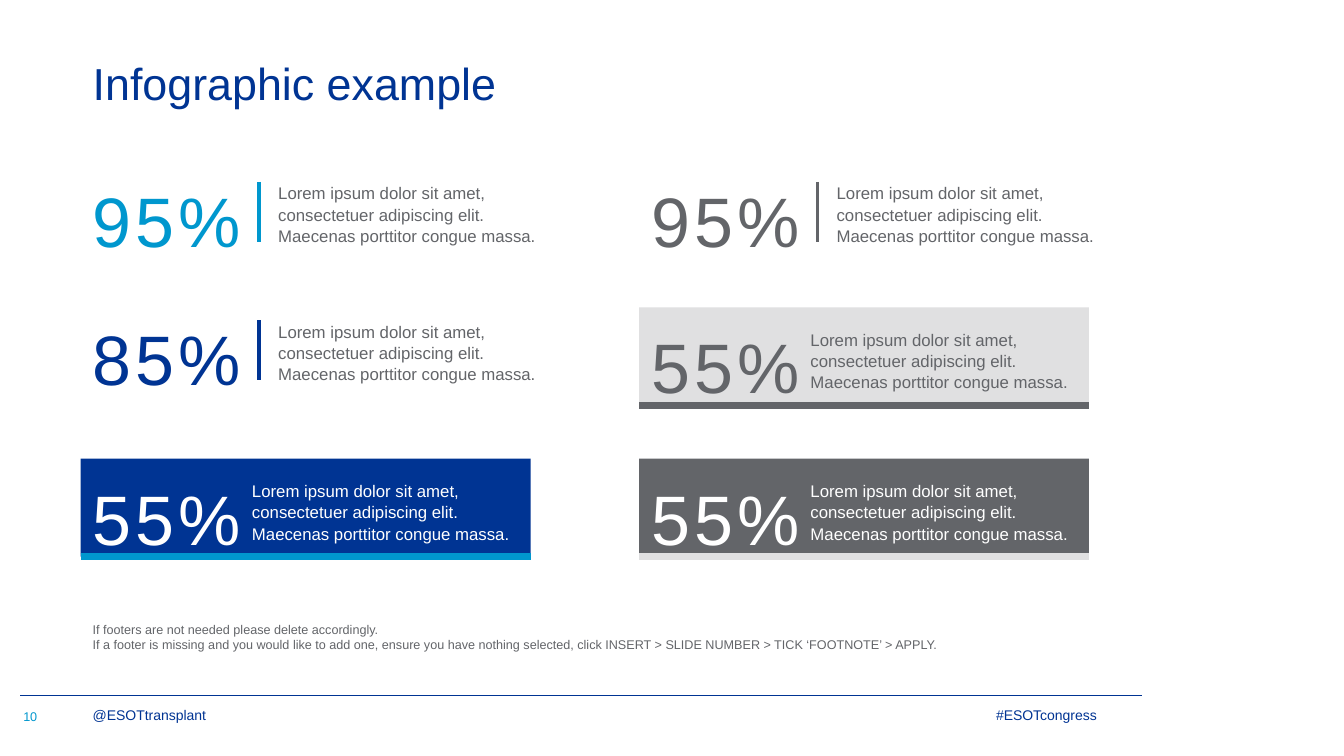
from dataclasses import dataclass

from lxml import etree
from pptx import Presentation
from pptx.dml.color import RGBColor
from pptx.enum.shapes import MSO_CONNECTOR, MSO_SHAPE
from pptx.enum.text import MSO_ANCHOR, PP_ALIGN
from pptx.oxml.ns import qn
from pptx.util import Pt

STRAIGHT, RECTANGLE = MSO_CONNECTOR.STRAIGHT, MSO_SHAPE.RECTANGLE
TOP, MIDDLE, BOTTOM = MSO_ANCHOR.TOP, MSO_ANCHOR.MIDDLE, MSO_ANCHOR.BOTTOM
LEFT, RIGHT = PP_ALIGN.LEFT, PP_ALIGN.RIGHT


@dataclass(frozen=True)
class Theme:
    font: str = "Arial"
    navy: str = "003493"
    cyan: str = "0097CE"
    grey: str = "636569"
    pale: str = "E0E0E1"
    white: str = "FFFFFF"
    title_size: int = 32
    figure_size: int = 50
    caption_size: int = 12
    footer_size: int = 10
    note_size: int = 9


THEME = Theme()

TITLE = "Infographic example"
CAPTION = ("Lorem ipsum dolor sit amet, consectetuer adipiscing elit. "
           "Maecenas porttitor congue massa.")
FOOTNOTE = [
    "If footers are not needed please delete accordingly.",
    "If a footer is missing and you would like to add one, ensure you have nothing "
    "selected, click INSERT > SLIDE NUMBER > TICK ‘FOOTNOTE’ > APPLY.",
]
SLIDE_NUMBER = "10"
HANDLE, HASHTAG = "@ESOTtransplant", "#ESOTcongress"

# column, row, figure, figure colour
PLAIN_STATS = [
    (0, 0, "95%", THEME.cyan),
    (0, 1, "85%", THEME.navy),
    (1, 0, "95%", THEME.grey),
]
# column, row, figure, text colour, card fill, base line colour
CARD_STATS = [
    (0, 2, "55%", THEME.white, THEME.navy, THEME.cyan),
    (1, 1, "55%", THEME.grey, THEME.pale, THEME.grey),
    (1, 2, "55%", THEME.white, THEME.grey, THEME.pale),
]

MARGIN = 66.24
COLUMNS = [MARGIN, MARGIN + 398.9]
ROWS = [121, 219.6, 327.6]
CONTENT_WIDTH = 828
FIGURE_WIDTH, CAPTION_WIDTH, STAT_HEIGHT = 113.8, 199.4, 43
CAPTION_DROP = 9
DIVIDER_GAP, PLAIN_CAPTION_GAP = 118.8, 132.5
CARD_WIDTH, CARD_HEIGHT = 321.4, 70
CARD_PAD_X, CARD_PAD_Y = 8.64, 5.8
FIGURE_SPACING, CAPTION_SPACING = 1.1, 1.06


def write(shape, lines, size, color, anchor=TOP, align=LEFT, spacing=None, tracking=0):
    """Fill a shape with one paragraph, its lines parted by line breaks."""
    frame = shape.text_frame
    frame.word_wrap = True
    frame.vertical_anchor = anchor
    frame.margin_left = frame.margin_right = frame.margin_top = frame.margin_bottom = 0
    paragraph = frame.paragraphs[0]
    paragraph.alignment = align
    if spacing:
        paragraph.line_spacing = spacing
    for index, line in enumerate(lines):
        if index:
            paragraph.add_line_break()
        run = paragraph.add_run()
        run.text = line
        run.font.name = THEME.font
        run.font.size = Pt(size)
        run.font.color.rgb = RGBColor.from_string(color)
        if tracking:
            run.font._element.set("spc", str(tracking * 100))


def add_text(slide, box, lines, size, color, **style):
    write(slide.shapes.add_textbox(*map(Pt, box)), lines, size, color, **style)


def add_line(slide, start, end, color, width):
    line = slide.shapes.add_connector(STRAIGHT, *map(Pt, (*start, *end)))
    line.line.color.rgb = RGBColor.from_string(color)
    line.line.width = Pt(width)
    etree.SubElement(line._element.spPr, qn("a:effectLst"))


def add_stat(slide, left, top, figure, figure_color, caption_gap, caption_color):
    add_text(slide, (left, top, FIGURE_WIDTH, STAT_HEIGHT), [figure],
             THEME.figure_size, figure_color, spacing=FIGURE_SPACING, tracking=3)
    add_text(slide, (left + caption_gap, top + CAPTION_DROP, CAPTION_WIDTH, STAT_HEIGHT),
             [CAPTION], THEME.caption_size, caption_color, spacing=CAPTION_SPACING)


def add_plain_stat(slide, column, row, figure, color):
    left, top = COLUMNS[column], ROWS[row]
    add_stat(slide, left, top, figure, color, PLAIN_CAPTION_GAP, THEME.grey)
    divider_x, divider_top = left + DIVIDER_GAP, top + CAPTION_DROP
    add_line(slide, (divider_x, divider_top), (divider_x, divider_top + STAT_HEIGHT),
             color, 2.5)


def add_card_stat(slide, column, row, figure, color, fill, base_color):
    left, top = COLUMNS[column] - CARD_PAD_X, ROWS[row]
    card = slide.shapes.add_shape(
        RECTANGLE, *map(Pt, (left, top, CARD_WIDTH, CARD_HEIGHT)))
    card.shadow.inherit = False
    card.fill.solid()
    card.fill.fore_color.rgb = RGBColor.from_string(fill)
    card.line.fill.background()
    add_stat(slide, COLUMNS[column], top + CARD_PAD_Y, figure, color, FIGURE_WIDTH, color)
    base = top + CARD_HEIGHT
    add_line(slide, (left, base), (left + CARD_WIDTH, base), base_color, 5)


def add_footer(slide):
    add_line(slide, (14.4, 496.8), (815.8, 496.8), THEME.navy, 0.5)
    add_text(slide, (16.6, 499, 27.4, 18), [SLIDE_NUMBER],
             THEME.note_size, THEME.cyan, anchor=BOTTOM)
    add_text(slide, (MARGIN, 504.7, 95.8, 12.2), [HANDLE],
             THEME.footer_size, THEME.navy, anchor=BOTTOM)
    add_text(slide, (697, 504.7, 86.4, 12.2), [HASHTAG],
             THEME.footer_size, THEME.navy, anchor=BOTTOM, align=RIGHT)


def main():
    deck = Presentation()
    deck.slide_width, deck.slide_height = Pt(960), Pt(540)
    slide = deck.slides.add_slide(deck.slide_layouts[5])

    title = slide.shapes.title
    title.left, title.top, title.width, title.height = map(
        Pt, (MARGIN, 28.8, CONTENT_WIDTH, 65.5))
    write(title, [TITLE], THEME.title_size, THEME.navy, anchor=MIDDLE, spacing=0.9)

    for stat in PLAIN_STATS:
        add_plain_stat(slide, *stat)
    for stat in CARD_STATS:
        add_card_stat(slide, *stat)

    add_text(slide, (MARGIN, 437, CONTENT_WIDTH, 28.8), FOOTNOTE,
             THEME.note_size, THEME.grey, anchor=BOTTOM)
    add_footer(slide)
    deck.save("out.pptx")


if __name__ == "__main__":
    main()
